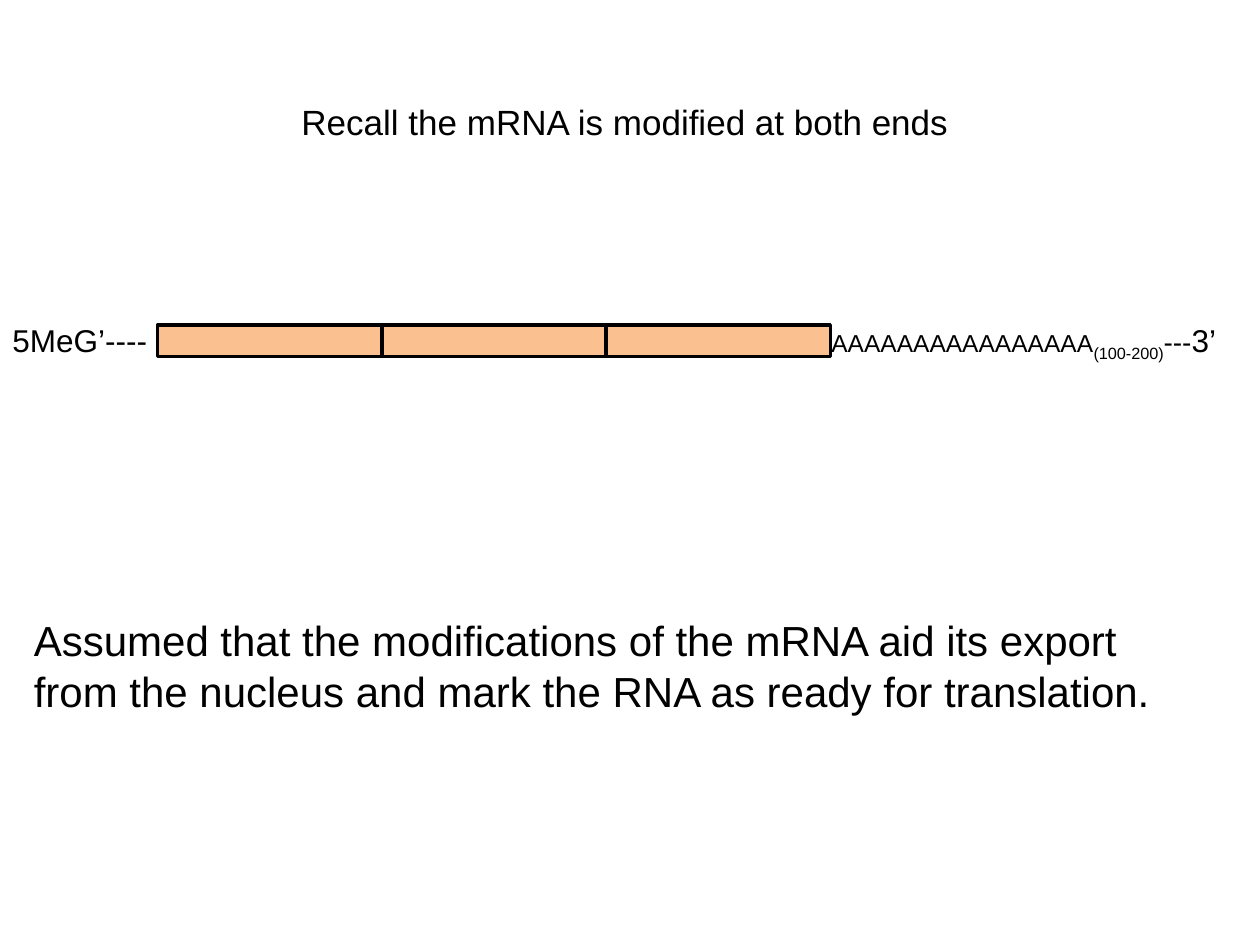
from pptx import Presentation
from pptx.dml.color import RGBColor
from pptx.enum.shapes import MSO_SHAPE
from pptx.enum.text import MSO_AUTO_SIZE, PP_ALIGN
from pptx.util import Inches, Pt

COLORS = {"text": "000000", "exon": "FAC090", "line": "000000", "bg": "FFFFFF"}
EXONS = 3


def rgb(name):
    return RGBColor.from_string(COLORS[name])


def add_text(shapes, box, runs, align=PP_ALIGN.LEFT):
    """Place one paragraph; runs are (text, points, baseline percent)."""
    tf = shapes.add_textbox(*map(Inches, box)).text_frame
    for name, value in {"word_wrap": True,
                        "auto_size": MSO_AUTO_SIZE.SHAPE_TO_FIT_TEXT}.items():
        setattr(tf, name, value)
    p = tf.paragraphs[0]
    p.alignment = align
    for text, size, baseline in runs:
        r = p.add_run()
        r.text = text
        for name, value in {"name": "Arial", "size": Pt(size)}.items():
            setattr(r.font, name, value)
        r.font.color.rgb = rgb("text")
        if baseline:
            r.font._element.set("baseline", str(baseline * 1000))


def add_exons(shapes, box):
    """Split the box into equal adjoining exons."""
    left, top, width, height = box
    step = width / EXONS
    for i in range(EXONS):
        sp = shapes.add_shape(MSO_SHAPE.RECTANGLE, Inches(left + i * step),
                              Inches(top), Inches(step), Inches(height))
        sp.shadow.inherit = False
        sp.fill.solid()
        sp.fill.fore_color.rgb = rgb("exon")
        sp.line.color.rgb = rgb("line")
        sp.line.width = Pt(2)


def add_mrna(s, box):
    """Capped and polyadenylated transcript across the box."""
    left, top, width, height = box
    shapes = s.shapes.add_group_shape().shapes
    add_exons(shapes, (left + 1.25, top + 0.08, 5.34, 0.25))
    # 5' cap
    add_text(shapes, (left, top, 1.42, height), [("5MeG’----", 18, 0)])
    # Poly-A tail
    tail = [("A" * 16, 14, 0), ("(100-200)", 16, -25),
            ("---", 16, 0), ("3’", 18, 0)]
    add_text(shapes, (left + width - 3.5, top, 3.5, height), tail)


def main():
    prs = Presentation()
    prs.slide_width, prs.slide_height = Inches(10), Inches(7.5)
    s = prs.slides.add_slide(prs.slide_layouts[6])
    s.background.fill.solid()
    s.background.fill.fore_color.rgb = rgb("bg")

    # Heading
    add_text(s.shapes, (1.25, 0.75, 7.42, 0.44),
             [("Recall the mRNA is modified at both ends", 20, 0)],
             PP_ALIGN.CENTER)
    # Diagram
    add_mrna(s, (0, 2.5, 10, 0.4))
    # Conclusion
    add_text(s.shapes, (0.17, 4.83, 9.5, 0.91),
             [("Assumed that the modifications of the mRNA aid its export from "
               "the nucleus and mark the RNA as ready for translation.", 24, 0)])

    prs.save("out.pptx")


if __name__ == "__main__":
    main()
